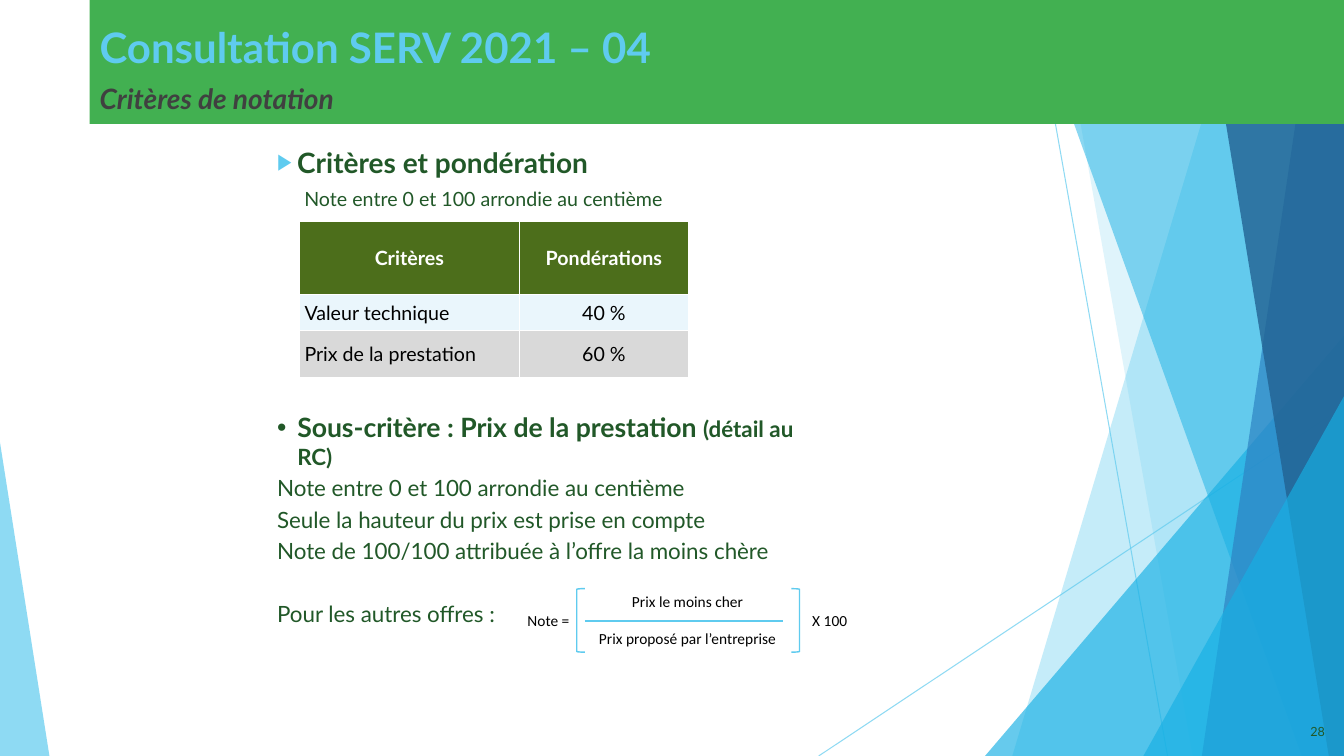
from dataclasses import dataclass

from lxml import etree
from pptx import Presentation
from pptx.dml.color import RGBColor
from pptx.enum.shapes import MSO_CONNECTOR, MSO_SHAPE
from pptx.enum.text import MSO_ANCHOR, PP_ALIGN
from pptx.oxml.ns import qn
from pptx.util import Inches, Pt

LEFT, CENTER, RIGHT = PP_ALIGN.LEFT, PP_ALIGN.CENTER, PP_ALIGN.RIGHT
TOP, MIDDLE, BOTTOM = MSO_ANCHOR.TOP, MSO_ANCHOR.MIDDLE, MSO_ANCHOR.BOTTOM
RECTANGLE, TRIANGLE = MSO_SHAPE.RECTANGLE, MSO_SHAPE.ISOSCELES_TRIANGLE
LEFT_BRACKET, RIGHT_BRACKET = MSO_SHAPE.LEFT_BRACKET, MSO_SHAPE.RIGHT_BRACKET
STRAIGHT = MSO_CONNECTOR.STRAIGHT


@dataclass(frozen=True)
class Theme:
    font: str = "Lato"
    formula_font: str = "Calibri"
    sky: str = "5FCBEF"
    cyan: str = "17B0E4"
    blue: str = "2E83C3"
    navy: str = "226292"
    banner: str = "42B051"
    text: str = "215828"
    subtitle: str = "404040"
    header: str = "4C6E1B"
    pale: str = "EAF6FC"
    grey: str = "D9D9D9"
    white: str = "FFFFFF"
    black: str = "000000"
    title_size: int = 30
    heading_size: int = 20
    subheading_size: int = 19
    body_size: int = 16
    small_size: int = 14
    formula_size: int = 11
    number_size: int = 9


class SlideBuilder:
    def __init__(self, slide, theme):
        self.shapes = slide.shapes
        self.theme = theme

    def set_alpha(self, color_format_parent, alpha):
        for color in color_format_parent.iter(qn("a:srgbClr")):
            etree.SubElement(color, qn("a:alpha")).set("val", str(alpha * 1000))

    def paint(self, shape, color, alpha=100):
        shape.shadow.inherit = False
        shape.fill.solid()
        shape.fill.fore_color.rgb = RGBColor.from_string(color)
        shape.line.fill.background()
        if alpha < 100:
            self.set_alpha(shape._element.spPr, alpha)

    def shape(self, kind, area, color, alpha=100, apex=None):
        shape = self.shapes.add_shape(kind, *map(Inches, area))
        if apex is not None:
            shape.adjustments[0] = apex
        self.paint(shape, color, alpha)

    def polygon(self, points, color, alpha):
        corners = [(Inches(x), Inches(y)) for x, y in points]
        builder = self.shapes.build_freeform(*corners[0], scale=1.0)
        builder.add_line_segments(corners[1:], close=True)
        self.paint(builder.convert_to_shape(), color, alpha)

    def bracket(self, kind, area):
        shape = self.shapes.add_shape(kind, *map(Inches, area))
        shape.shadow.inherit = False
        shape.fill.background()
        shape.line.color.rgb = RGBColor.from_string(self.theme.sky)
        shape.line.width = Pt(1)

    def line(self, start, end, width, alpha=100):
        line = self.shapes.add_connector(STRAIGHT, *map(Inches, start + end))
        line.line.color.rgb = RGBColor.from_string(self.theme.sky)
        line.line.width = Pt(width)
        properties = line._element.spPr
        if alpha < 100:
            self.set_alpha(properties, alpha)
        etree.SubElement(properties, qn("a:effectLst"))

    def style(self, span, size, color, bold=False, italic=False, font=None):
        span.font.name = font or self.theme.font
        span.font.size = Pt(size)
        span.font.bold = bold
        span.font.italic = italic
        span.font.color.rgb = RGBColor.from_string(color)

    def text_box(self, area, anchor=TOP, margin=None):
        frame = self.shapes.add_textbox(*map(Inches, area)).text_frame
        frame.word_wrap = True
        frame.vertical_anchor = anchor
        if margin is not None:
            frame.margin_left = frame.margin_right = Inches(margin)
            frame.margin_top = frame.margin_bottom = Inches(margin)
        return frame

    def paragraph(self, frame, text, size, color, align=LEFT, before=0, **look):
        para = frame.paragraphs[0] if not frame.text else frame.add_paragraph()
        para.text = text
        para.alignment = align
        para.space_before = Pt(before)
        self.style(para.runs[0], size, color, **look)
        return para

    def indent(self, para, left, first=0.0):
        properties = para._p.get_or_add_pPr()
        properties.set("marL", str(Inches(left)))
        properties.set("indent", str(Inches(first)))
        return properties

    def bullet(self, para, symbol, color, percent=100):
        properties = self.indent(para, 0.2, -0.2)
        fill = etree.SubElement(properties, qn("a:buClr"))
        etree.SubElement(fill, qn("a:srgbClr")).set("val", color)
        etree.SubElement(properties, qn("a:buSzPct")).set("val", str(percent * 1000))
        etree.SubElement(properties, qn("a:buFont")).set("typeface", "Arial")
        etree.SubElement(properties, qn("a:buChar")).set("char", symbol)

    def cell(self, cell, text, fill, color, align, bold):
        cell.margin_left = cell.margin_right = Inches(0.05)
        cell.margin_top = cell.margin_bottom = 0
        cell.vertical_anchor = MIDDLE
        para = self.paragraph(cell.text_frame, text, self.theme.small_size, color, align, bold=bold)
        para.space_after = Pt(6)
        properties = cell._tc.get_or_add_tcPr()
        for side in ("a:lnL", "a:lnR", "a:lnT", "a:lnB"):
            border = etree.SubElement(properties, qn(side), w=str(Pt(1)))
            paint = etree.SubElement(border, qn("a:solidFill"))
            etree.SubElement(paint, qn("a:srgbClr")).set("val", self.theme.white)
        cell.fill.solid()
        cell.fill.fore_color.rgb = RGBColor.from_string(fill)

    def table(self, area, widths, heights, rows, fills):
        table = self.shapes.add_table(len(rows), len(widths), *map(Inches, area)).table
        table.first_row = table.horz_banding = False
        for column, width in zip(table.columns, widths):
            column.width = Inches(width)
        for index, (values, fill) in enumerate(zip(rows, fills)):
            table.rows[index].height = Inches(heights[index])
            header = index == 0
            color = self.theme.white if header else self.theme.black
            for position, value in enumerate(values):
                align = CENTER if header or position else LEFT
                self.cell(table.cell(index, position), value, fill, color, align, header)


def draw_background(page, theme):
    right, bottom = 13.33, 7.5
    page.line((10.25, 0), (11.58, bottom), 0.75, 70)
    page.line((right, 4.03), (8.12, bottom), 0.75, 70)

    def band(top, base, color, alpha):
        page.polygon([(top, 0), (right, 0), (right, bottom), (base, bottom)], color, alpha)

    band(12.28, 10.04, theme.sky, 36)
    band(10.5, 11.83, theme.sky, 20)
    page.shape(TRIANGLE, (9.77, 3.33, 3.56, 4.17), theme.cyan, 66, apex=1)
    band(10.21, 12.91, theme.cyan, 50)
    band(13.03, 11.92, theme.blue, 70)
    band(11.96, 13.18, theme.navy, 80)
    page.shape(TRIANGLE, (11.34, 3.93, 1.99, 3.57), theme.cyan, 66, apex=1)
    page.shape(TRIANGLE, (0, 4.39, 0.49, 3.11), theme.sky, 70, apex=0)
    page.shape(RECTANGLE, (0.89, 0, 12.44, 1.23), theme.banner)


def draw_formula(page, theme):
    page.line((5.8, 6.16), (7.77, 6.16), 1)
    page.bracket(LEFT_BRACKET, (5.72, 5.84, 0.08, 0.63))
    page.bracket(RIGHT_BRACKET, (7.85, 5.84, 0.08, 0.63))
    for text, center, middle, width in [
        ("Prix le moins cher", 6.82, 5.97, 1.9),
        ("Note =", 5.44, 6.15, 0.5),
        ("X 100", 8.23, 6.15, 0.5),
        ("Prix proposé par l’entreprise", 6.82, 6.33, 1.9),
    ]:
        frame = page.text_box((center - width / 2, middle - 0.1, width, 0.2), MIDDLE, 0)
        page.paragraph(frame, text, theme.formula_size, theme.black, CENTER, font=theme.formula_font)


def main():
    theme = Theme()
    deck = Presentation()
    deck.slide_width, deck.slide_height = Inches(13.33), Inches(7.5)
    page = SlideBuilder(deck.slides.add_slide(deck.slide_layouts[6]), theme)
    draw_background(page, theme)

    title = page.text_box((0.89, -0.03, 12.44, 0.79), BOTTOM)
    page.paragraph(title, "Consultation SERV 2021 – 04", theme.title_size, theme.sky, bold=True)
    subtitle = page.text_box((0.89, 0.76, 12.44, 0.47))
    page.paragraph(subtitle, "Critères de notation", theme.heading_size, theme.subtitle, bold=True, italic=True)
    number = page.text_box((10.13, 7.06, 3.11, 0.4), MIDDLE)
    page.paragraph(number, "28", theme.number_size, theme.text, RIGHT)

    weighting = page.text_box((2.65, 1.39, 8.74, 0.71))
    heading = page.paragraph(weighting, "Critères et pondération", theme.heading_size, theme.text, bold=True)
    page.bullet(heading, "▶", theme.sky, 80)
    note = page.paragraph(weighting, "Note entre 0 et 100 arrondie au centième", theme.small_size, theme.text, before=6)
    page.indent(note, 0.27)
    page.table((2.97, 2.2, 3.86, 1.55), (2.18, 1.68), (0.72, 0.36, 0.47),
               [("Critères", "Pondérations"), ("Valeur technique", "40 %"), ("Prix de la prestation", "60 %")],
               (theme.header, theme.pale, theme.grey))

    price = page.text_box((2.65, 4.03, 5.59, 2.95))
    heading = page.paragraph(price, "Sous-critère : Prix de la prestation ", theme.subheading_size, theme.text, bold=True)
    page.bullet(heading, "•", theme.text)
    detail = heading.add_run()
    detail.text = "(détail au RC)"
    page.style(detail, theme.body_size, theme.text, bold=True)
    for text, before in [
        ("Note entre 0 et 100 arrondie au centième", 3.2),
        ("Seule la hauteur du prix est prise en compte", 3.2),
        ("Note de 100/100 attribuée à l’offre la moins chère", 3.2),
        ("Pour les autres offres :", 25.6),
    ]:
        page.paragraph(price, text, theme.body_size, theme.text, before=before)
    draw_formula(page, theme)
    deck.save("out.pptx")


if __name__ == "__main__":
    main()
